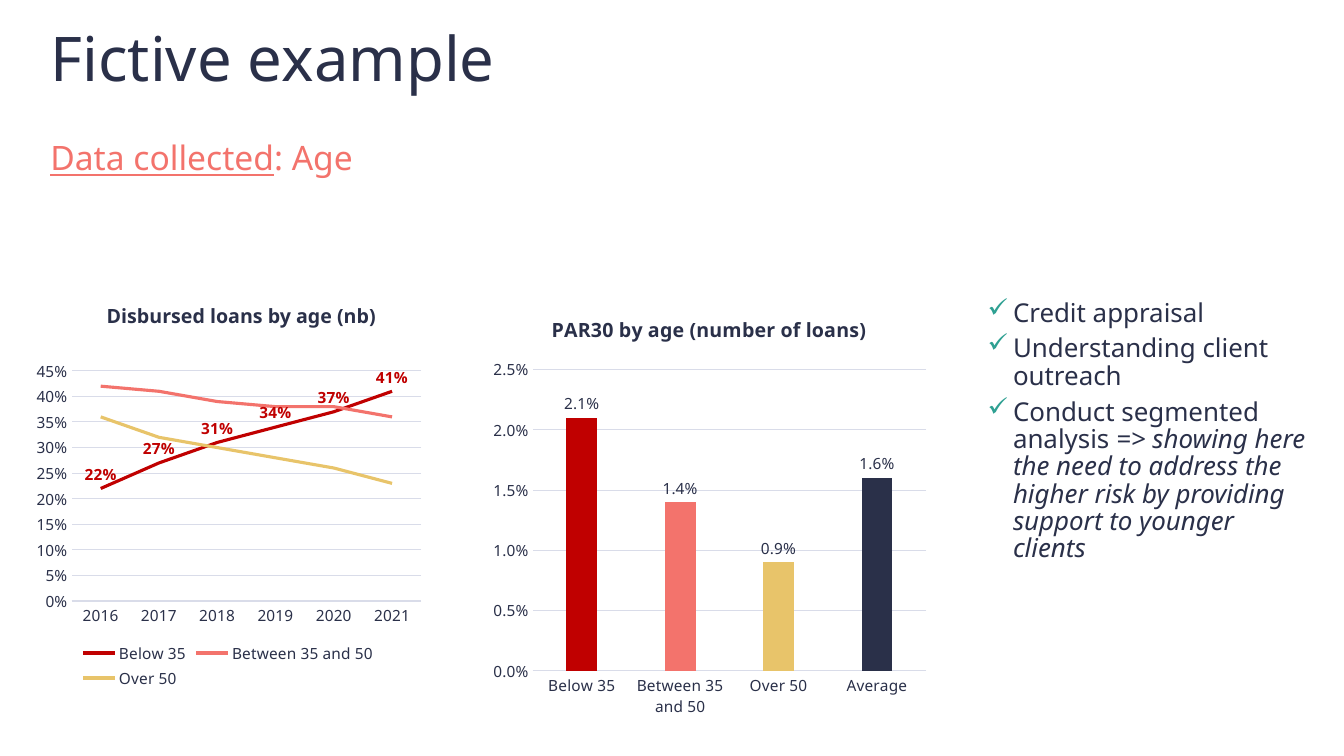
from lxml import etree
from pptx import Presentation
from pptx.chart.data import CategoryChartData
from pptx.dml.color import RGBColor
from pptx.enum.chart import (XL_CHART_TYPE as Kind, XL_LABEL_POSITION as LabelPos,
                             XL_LEGEND_POSITION as LegendPos, XL_TICK_MARK as Tick)
from pptx.enum.text import MSO_ANCHOR as Anchor
from pptx.oxml.ns import qn
from pptx.util import Cm, Pt

FONT = "Noto Sans"
NAVY, CORAL, RED, GOLD, GREEN, GRID = "2A3049", "F3736C", "C00000", "E8C46A", "2EA092", "D9DCE9"


def rgb(color):
    return RGBColor.from_string(color)


def set_font(font, size, color=NAVY, bold=False):
    font.name, font.size, font.bold = FONT, Pt(size), bold
    font.color.rgb = rgb(color)


def add_text(s, box, text, size, color=NAVY, bold=False, anchor=Anchor.TOP):
    """Place a text box, one paragraph per line of text, and return its paragraphs."""
    tf = s.shapes.add_textbox(*map(Cm, box)).text_frame
    tf.word_wrap = True
    tf.vertical_anchor = anchor
    tf.text = text
    for p in tf.paragraphs:
        p.space_after = Pt(6)
        for r in p.runs:
            set_font(r.font, size, color, bold)
    return tf.paragraphs


def add_heading(s, box):
    """Place the title and, below it, the line naming the data."""
    left, top, width, height = box
    add_text(s, (left, top, width, 2.49), "Fictive example", 44, anchor=Anchor.MIDDLE)
    p = add_text(s, (left, top + height - 1.6, width, 1.6), "Data collected", 24, CORAL)[0]
    p.runs[0].font.underline = True
    r = p.add_run()
    r.text = ": Age"
    set_font(r.font, 24, CORAL)


def add_uses(s, box):
    """Place the ticked list of uses of the data."""
    size = 18.5
    uses = ["Credit appraisal", "Understanding client outreach", "Conduct segmented analysis "]
    paragraphs = add_text(s, box, "\n".join(uses), size)
    for p in paragraphs:
        p.line_spacing = 0.88
        pPr = p._p.get_or_add_pPr()
        pPr.set("marL", str(Cm(0.64)))
        pPr.set("indent", str(-Cm(0.64)))
        color = etree.SubElement(pPr, qn("a:buClr"))
        etree.SubElement(color, qn("a:srgbClr")).set("val", GREEN)
        etree.SubElement(pPr, qn("a:buChar")).set("char", "✓")
    r = paragraphs[-1].add_run()
    r.text = ("=> showing here the need to address the higher risk "
              "by providing support to younger clients")
    set_font(r.font, size)
    r.font.italic = True


def set_plot_area(chart, **fractions):
    """Fix the inner plot area as fractions of the chart."""
    area = chart._chartSpace.chart.plotArea
    for old in area.findall(qn("c:layout")):
        area.remove(old)
    layout = etree.Element(qn("c:layout"))
    area.insert(0, layout)
    manual = etree.SubElement(layout, qn("c:manualLayout"))
    settings = {"layoutTarget": "inner", "xMode": "edge", "yMode": "edge", **fractions}
    for name, value in settings.items():
        etree.SubElement(manual, qn(f"c:{name}")).set("val", str(value))


def add_percent_chart(s, box, kind, categories, series, top, step, number_format):
    """Place a chart with a percent axis and pale grid lines."""
    data = CategoryChartData(number_format=number_format)
    data.categories = categories
    for name, values in series:
        data.add_series(name, values)
    chart = s.shapes.add_chart(kind, *map(Cm, box), data).chart
    set_font(chart.font, 11)
    chart.has_title = chart.has_legend = False
    chart.plots[0].vary_by_categories = False

    years, percents = chart.category_axis, chart.value_axis
    for axis in (years, percents):
        axis.major_tick_mark = axis.minor_tick_mark = Tick.NONE
    percents.minimum_scale, percents.maximum_scale, percents.major_unit = 0, top, step
    percents.has_major_gridlines = True
    percents.tick_labels.number_format = number_format
    percents.tick_labels.number_format_is_linked = False
    percents.format.line.fill.background()
    for line in (years.format.line, percents.major_gridlines.format.line):
        line.color.rgb = rgb(GRID)
        line.width = Pt(0.75)
    return chart


def show_values(labels, number_format, position, color=NAVY, bold=False):
    labels.show_value = True
    labels.number_format = number_format
    labels.number_format_is_linked = False
    labels.position = position
    set_font(labels.font, 11, color, bold)


def add_loans(s, box):
    """Place the line chart of loans by age under its heading."""
    left, top, width, height = box
    add_text(s, (left + 1.75, top, 8.18, 0.99), "Disbursed loans by age (nb)", 14, bold=True)
    series = [("Below 35", (0.22, 0.27, 0.31, 0.34, 0.37, 0.41)),
              ("Between 35 and 50", (0.42, 0.41, 0.39, 0.38, 0.38, 0.36)),
              ("Over 50", (0.36, 0.32, 0.30, 0.28, 0.26, 0.23))]
    years = [str(year) for year in range(2016, 2022)]
    chart = add_percent_chart(s, (left, top + 1.38, width, height - 1.38), Kind.LINE,
                              years, series, 0.45, 0.05, "0%")
    set_plot_area(chart, x=0.11, y=0.05, w=0.87, h=0.68)
    chart.has_legend = True
    chart.legend.position = LegendPos.BOTTOM
    chart.legend.include_in_layout = False
    set_font(chart.legend.font, 11)
    for ages, color in zip(chart.series, (RED, CORAL, GOLD)):
        ages.smooth = False
        ages.format.line.color.rgb = rgb(color)
        ages.format.line.width = Pt(2.25)
    show_values(chart.series[0].data_labels, "0%", LabelPos.ABOVE, RED, True)


def add_risk(s, box):
    """Place the column chart of PAR30 by age."""
    ages = ["Below 35", "Between 35 and 50", "Over 50", "Average"]
    chart = add_percent_chart(s, box, Kind.COLUMN_CLUSTERED, ages,
                              [("Series 1", (0.021, 0.014, 0.009, 0.016))],
                              0.025, 0.005, "0.0%")
    set_plot_area(chart, x=0.11, y=0.17, w=0.87, h=0.7)
    chart.has_title = True
    chart.chart_title.include_in_layout = False
    tf = chart.chart_title.text_frame
    tf.text = "PAR30 by age (number of loans)"
    set_font(tf.paragraphs[0].runs[0].font, 14, bold=True)
    plot = chart.plots[0]
    plot.gap_width, plot.overlap = 219, -27
    for i, color in enumerate((RED, CORAL, GOLD, NAVY)):
        fill = plot.series[0].points[i].format.fill
        fill.solid()
        fill.fore_color.rgb = rgb(color)
    show_values(plot.series[0].data_labels, "0.0%", LabelPos.OUTSIDE_END)


def main():
    prs = Presentation()
    prs.slide_width, prs.slide_height = Cm(33.87), Cm(19.05)
    s = prs.slides.add_slide(prs.slide_layouts[6])
    add_heading(s, (1.02, 0.2, 29.21, 4.73))
    add_loans(s, (0.69, 7.54, 10.13, 9.91))
    add_risk(s, (12.17, 7.47, 11.4, 10.85))
    add_uses(s, (24.64, 7.44, 8.61, 7.75))
    prs.save("out.pptx")


if __name__ == "__main__":
    main()
